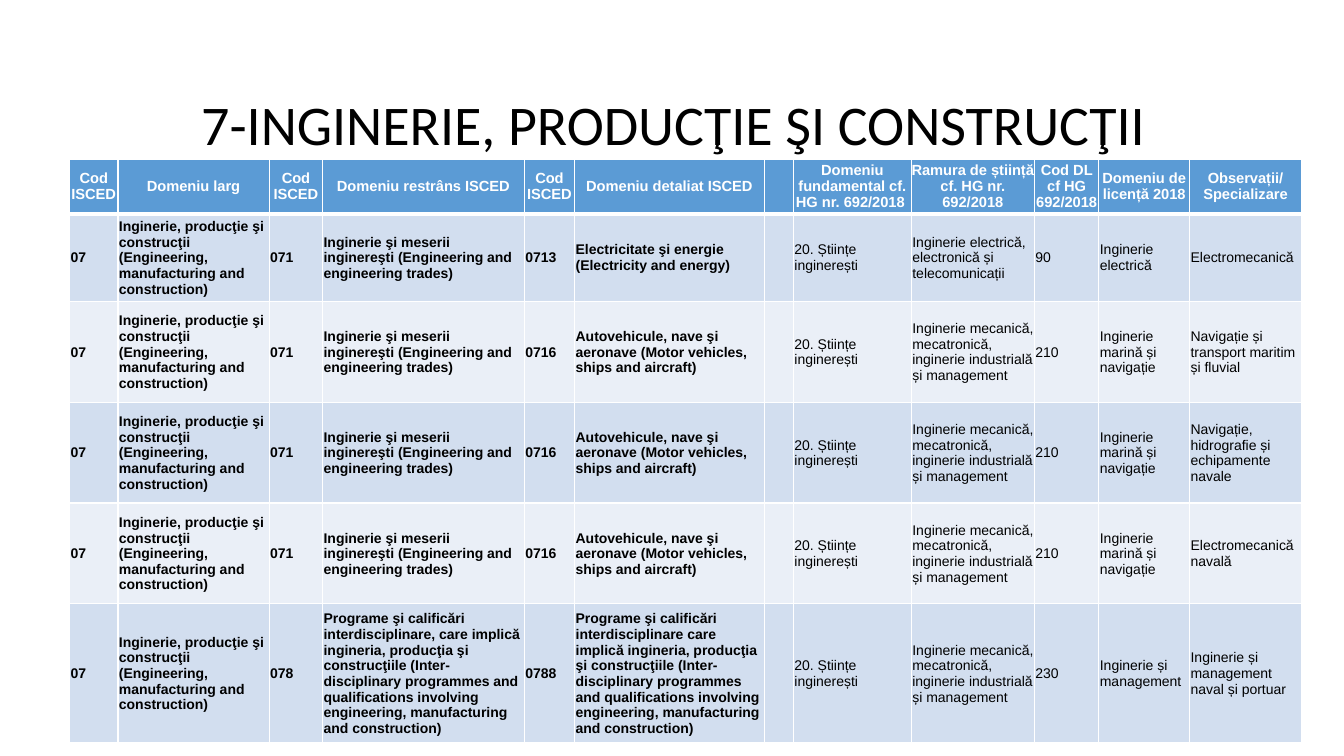
"""Build the slide that maps ISCED engineering codes to national study fields."""
from lxml import etree
from pptx import Presentation
from pptx.dml.color import RGBColor
from pptx.enum.text import MSO_ANCHOR, PP_ALIGN
from pptx.oxml.ns import qn
from pptx.util import Inches, Pt

MIDDLE = MSO_ANCHOR.MIDDLE
LEFT, CENTER = PP_ALIGN.LEFT, PP_ALIGN.CENTER
UNIT = Inches(0.01)
COLORS = {"head": "5B9BD5", "odd": "D2DEEF", "even": "EAEFF7",
          "white": "FFFFFF", "black": "000000"}
COLS = [48, 150, 53, 200, 50, 188, 29, 117, 122, 64, 90, 111]
ROWS = [54, 87, 100, 100, 100, 138]
GAP = 6


def write(frame, text, size=10, font="Arial", color="black", bold=False,
          align=LEFT, space=1.0):
    para = frame.paragraphs[0]
    para.alignment = align
    para.line_spacing = space
    run = para.add_run()
    run.text = text
    run.font.size = Pt(size)
    run.font.name = font
    run.font.bold = bold
    run.font.color.rgb = RGBColor.from_string(COLORS[color])


def edge(cell, heavy):
    props = cell._tc.get_or_add_tcPr()
    for side in "LRTB":
        width = Pt(3 if side == heavy else 1)
        line = etree.SubElement(props, qn(f"a:ln{side}"), w=str(width))
        fill = etree.SubElement(line, qn("a:solidFill"))
        etree.SubElement(fill, qn("a:srgbClr"), val=COLORS["white"])


head = ["Cod ISCED", "Domeniu larg", "Cod ISCED", "Domeniu restrâns ISCED",
        "Cod ISCED", "Domeniu detaliat ISCED", "",
        "Domeniu fundamental cf. HG nr. 692/2018 ",
        "Ramura de știință cf. HG nr. 692/2018", "Cod DL cf HG 692/2018",
        "Domeniu de licență 2018", "Observații/ Specializare"]
broad = "Inginerie, producţie şi construcţii (Engineering, manufacturing and construction)"
trades = "Inginerie şi meserii inginereşti (Engineering and engineering trades)"
power = "Electricitate şi energie (Electricity and energy)"
ships = "Autovehicule, nave şi aeronave (Motor vehicles, ships and aircraft)"
mixed = ("Programe şi calificări interdisciplinare{} care implică ingineria, "
         "producţia şi construcţiile (Inter-disciplinary programmes and "
         "qualifications involving engineering, manufacturing and construction)")
base = "20. Științe inginerești"
electric = "Inginerie electrică, electronică și telecomunicații"
mech = "Inginerie mecanică, mecatronică, inginerie industrială și management"
marine = ["071", trades, "0716", ships, "", base, mech, "210",
          "Inginerie marină și navigație"]
body = [
    ["071", trades, "0713", power, "", base, electric, "90",
     "Inginerie electrică", "Electromecanică"],
    marine + ["Navigație și transport maritim și fluvial"],
    marine + ["Navigație, hidrografie și echipamente navale"],
    marine + ["Electromecanică navală"],
    ["078", mixed.format(","), "0788", mixed.format(""), "", base, mech, "230",
     "Inginerie și management", "Inginerie și management naval și portuar"],
]

deck = Presentation()
deck.slide_width, deck.slide_height = Inches(13.33), Inches(7.5)
slide = deck.slides.add_slide(deck.slide_layouts[6])

title = slide.shapes.add_textbox(99 * UNIT, 90 * UNIT, 1150 * UNIT, 72 * UNIT)
title.text_frame.word_wrap = True
title.text_frame.vertical_anchor = MIDDLE
write(title.text_frame, "7-INGINERIE, PRODUCŢIE ŞI CONSTRUCŢII ", size=40,
      font="Calibri", align=CENTER, space=0.9)

table = slide.shapes.add_table(len(ROWS), len(COLS), 69 * UNIT, 158 * UNIT,
                               sum(COLS) * UNIT, sum(ROWS) * UNIT).table
for col, width in zip(table.columns, COLS):
    col.width = width * UNIT
for row, height in zip(table.rows, ROWS):
    row.height = height * UNIT

for r, texts in enumerate([head] + [["07", broad] + rest for rest in body]):
    top = r == 0
    shade = "head" if top else "odd" if r % 2 else "even"
    for c, text in enumerate(texts):
        cell = table.cell(r, c)
        edge(cell, "B" if top else "T" if r == 1 else "")
        cell.fill.solid()
        cell.fill.fore_color.rgb = RGBColor.from_string(COLORS[shade])
        cell.vertical_anchor = MIDDLE
        inset = 0 if top else UNIT
        cell.margin_left = cell.margin_right = cell.margin_top = inset
        cell.margin_bottom = 0
        if text and top:
            write(cell.text_frame, text, size=10.5, color="white", bold=True,
                  align=CENTER)
        elif text:
            write(cell.text_frame, text, bold=c < GAP)

deck.save("out.pptx")
